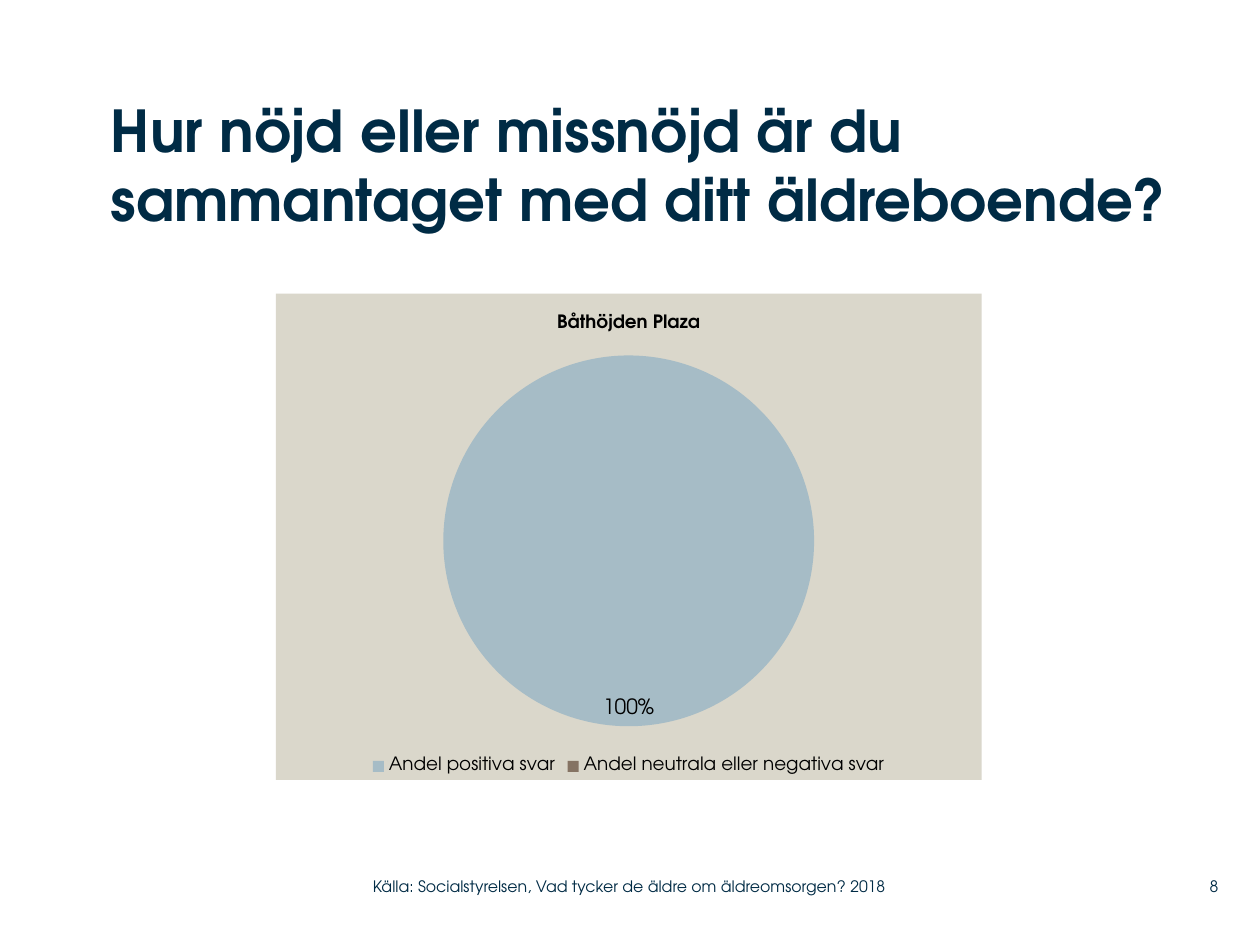
import pptx
import pptx.chart.data
import pptx.dml.color
import pptx.enum.chart
import pptx.enum.text
import pptx.oxml
import pptx.util
from pptx.util import Inches


def color(value):
    return pptx.dml.color.RGBColor.from_string(value)


class SlideBuilder:
    """Holds the style and the current slide, and adds each kind of element."""

    font_name = "TeX Gyre Adventor"
    navy = "002B45"
    black = "000000"
    panel = "DAD7CB"

    def __init__(self, presentation):
        self.slide = presentation.slides.add_slide(presentation.slide_layouts[5])

    def style_font(self, font, size, font_color, bold=False):
        font.name = self.font_name
        font.size = pptx.util.Pt(size)
        font.bold = bold
        font.color.rgb = color(font_color)

    def fill_text(self, shape, text, size, alignment, anchor, bold=False):
        frame = shape.text_frame
        frame.margin_left = frame.margin_right = 0
        frame.margin_top = frame.margin_bottom = 0
        frame.word_wrap = True
        frame.auto_size = pptx.enum.text.MSO_AUTO_SIZE.NONE
        frame.vertical_anchor = anchor
        frame.text = text
        paragraph = frame.paragraphs[0]
        paragraph.alignment = alignment
        self.style_font(paragraph.runs[0].font, size, self.navy, bold)

    def add_title(self, text, left, top, width, height):
        title = self.slide.shapes.title
        title.left, title.top = Inches(left), Inches(top)
        title.width, title.height = Inches(width), Inches(height)
        self.fill_text(title, text, 33, pptx.enum.text.PP_ALIGN.LEFT,
                       pptx.enum.text.MSO_ANCHOR.TOP, bold=True)

    def add_footer(self, text, left, width, alignment):
        box = self.slide.shapes.add_textbox(
            Inches(left), Inches(6.89), Inches(width), Inches(0.29))
        self.fill_text(box, text, 9, alignment, pptx.enum.text.MSO_ANCHOR.MIDDLE)

    def add_pie(self, title, shares, left, top, width, height):
        data = pptx.chart.data.CategoryChartData()
        data.categories = [name for name, value, fill in shares]
        data.add_series("Series 1", [value for name, value, fill in shares])
        chart = self.slide.shapes.add_chart(
            pptx.enum.chart.XL_CHART_TYPE.PIE, Inches(left), Inches(top),
            Inches(width), Inches(height), data).chart
        self.style_font(chart.font, 18, self.black)
        chart.has_title = True
        chart.chart_title.text_frame.text = title
        title_run = chart.chart_title.text_frame.paragraphs[0].runs[0]
        self.style_font(title_run.font, 10.5, self.black, bold=True)
        chart.has_legend = True
        chart.legend.position = pptx.enum.chart.XL_LEGEND_POSITION.BOTTOM
        chart.legend.include_in_layout = False
        self.style_font(chart.legend.font, 10.5, self.black)

        plot = chart.plots[0]
        plot.vary_by_categories = True
        for index, (name, value, fill) in enumerate(shares):
            point_format = plot.series[0].points[index].format
            point_format.fill.solid()
            point_format.fill.fore_color.rgb = color(fill)
            point_format.line.fill.background()
        plot.has_data_labels = True
        labels = plot.data_labels
        labels.show_value = False
        labels.show_percentage = True
        labels.number_format = "0%;;"
        labels.number_format_is_linked = False
        labels.position = pptx.enum.chart.XL_LABEL_POSITION.INSIDE_END
        self.style_font(labels.font, 12, self.black)
        self.fill_chart_area(chart)

    def fill_chart_area(self, chart):
        properties = pptx.oxml.parse_xml(
            '<c:spPr xmlns:c="http://schemas.openxmlformats.org/drawingml/2006/chart"'
            ' xmlns:a="http://schemas.openxmlformats.org/drawingml/2006/main">'
            f'<a:solidFill><a:srgbClr val="{self.panel}"/></a:solidFill>'
            '<a:ln><a:noFill/></a:ln></c:spPr>')
        chart.element.find(
            "{http://schemas.openxmlformats.org/drawingml/2006/chart}chart"
        ).addnext(properties)


def main():
    presentation = pptx.Presentation()
    presentation.slide_width = Inches(10)
    presentation.slide_height = Inches(7.5)
    builder = SlideBuilder(presentation)
    builder.add_title("Hur nöjd eller missnöjd är du sammantaget med ditt äldreboende?",
                      0.88, 0.75, 8.83, 1.42)
    builder.add_pie("Båthöjden Plaza", [
        ("Andel positiva svar", 100, "A6BCC6"),
        ("Andel neutrala eller negativa svar", 0, "857363"),
    ], 2.19, 2.33, 5.6, 3.86)
    builder.add_footer("Källa: Socialstyrelsen, Vad tycker de äldre om äldreomsorgen? 2018",
                       2.96, 4.43, pptx.enum.text.PP_ALIGN.LEFT)
    builder.add_footer("8", 9.2, 0.47, pptx.enum.text.PP_ALIGN.RIGHT)
    presentation.save("out.pptx")


if __name__ == "__main__":
    main()
